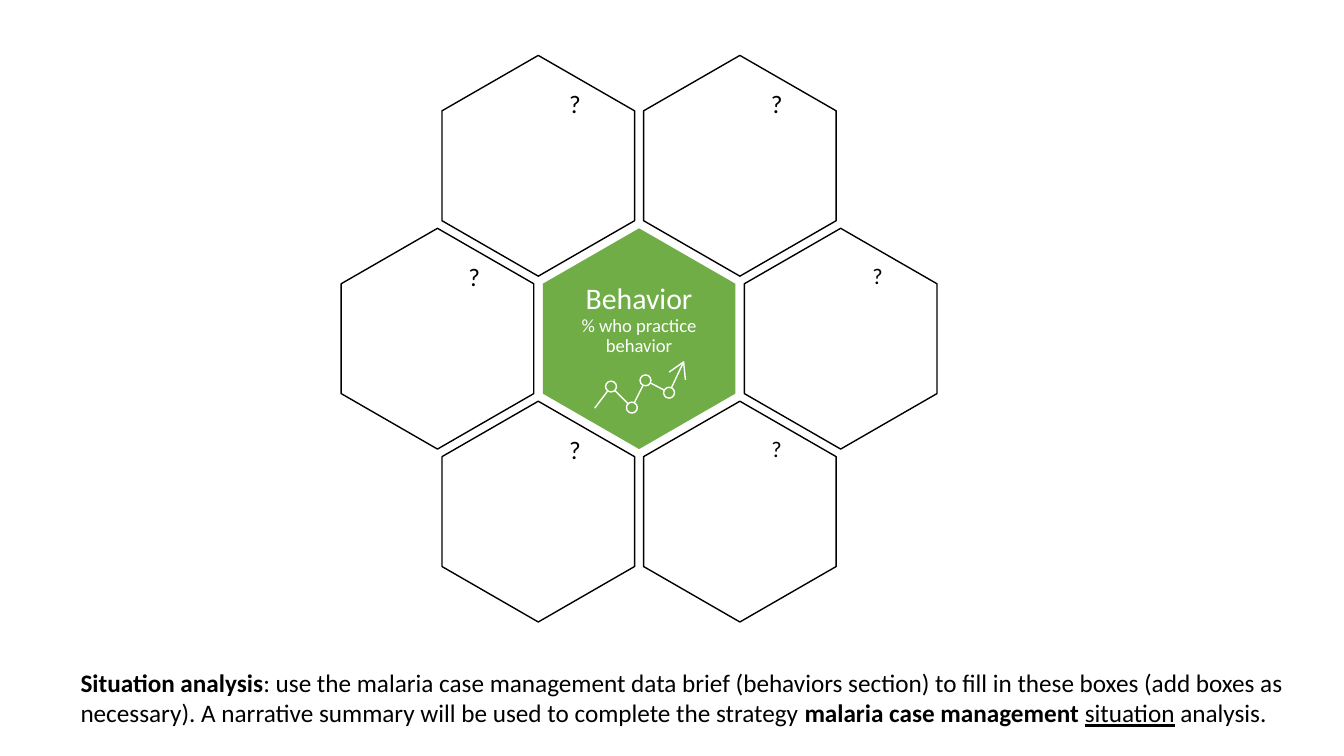
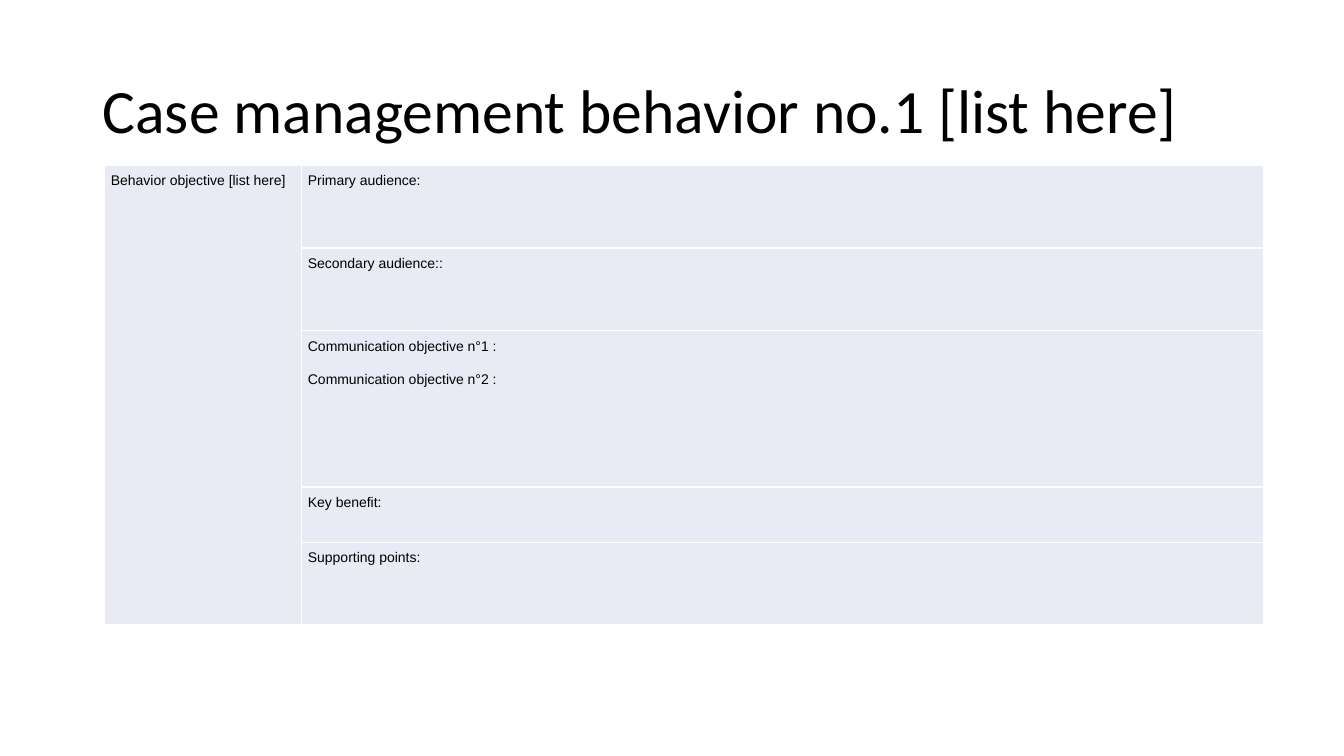
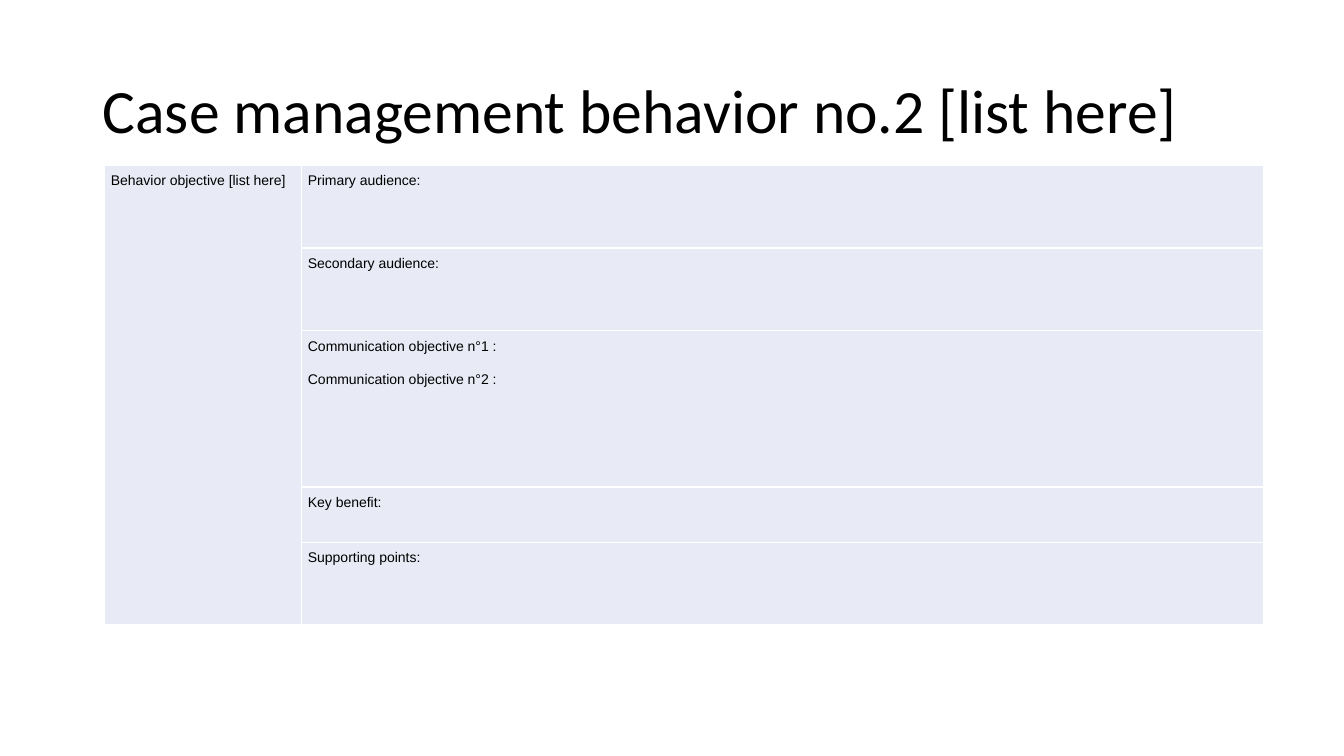
import math
from dataclasses import dataclass

from lxml import etree
from pptx import Presentation
from pptx import util as u
from pptx.dml.color import RGBColor
from pptx.enum import shapes, text
from pptx.oxml import ns

BLACK = RGBColor(0x00, 0x00, 0x00)
WHITE = RGBColor(0xFF, 0xFF, 0xFF)
GREEN = RGBColor(0x70, 0xAD, 0x47)
LAVENDER = RGBColor(0xE8, 0xEB, 0xF5)

BODY_FONT = "Calibri"
TABLE_FONT = "Arial"

WIDTH, HEIGHT = u.Inches(13.33), u.Inches(7.5)
COL, ROW = WIDTH / 100, HEIGHT / 100  # the slide is a grid of 100 by 100
THIN = u.Pt(1)


@dataclass
class Box:
    """A rectangle in columns and rows of the slide grid."""
    left: float
    top: float
    width: float
    height: float

    @classmethod
    def around(cls, x, y, width, height):
        return cls(x - width / 2, y - height / 2, width, height)

    def emu(self):
        return (round(self.left * COL), round(self.top * ROW),
                round(self.width * COL), round(self.height * ROW))

    def point(self, across, down):
        """The EMU position at the given shares of the box."""
        left, top, width, height = self.emu()
        return left + across * width, top + down * height


CAPTION = Box(5.25, 87.6, 91.2, 9.47)
TITLE = Box(6.9, 5.33, 86.25, 19.33)
TABLE = Box(7.8, 21.87, 86.25, 60.8)
HONEYCOMB = Box.around(47.55, 44.8, 44.7, 75)

HEX_LENGTH, HEX_BREADTH = 16.43, 25.47
HEX_STEP_X, HEX_STEP_Y = 7.5, 22.87
LABEL_WIDTH, LABEL_HEIGHT = 9.53, 19.47
QUESTION_INDENT = 5.47
# half-columns and rows from the centre, size of the question mark
QUESTIONS = [(-1, -1, 18), (-1, 1, 18), (1, 1, 16),
             (-2, 0, 18), (1, -1, 18), (2, 0, 16)]

TREND = [(0, 0.9), (0.18, 0.48), (0.41, 0.89), (0.56, 0.36), (0.82, 0.6), (0.98, 0)]
ARROWHEAD = [(1, 0.35), TREND[-1], (0.82, 0.2)]
NODE_SHARE = 0.12

COLUMN_SHARES = [0.17, 0.83]
ROW_SHARES = [0.18, 0.18, 0.34, 0.12, 0.18]


def style(para, size, color=BLACK, font=BODY_FONT, spacing=1.0, align=None):
    para.font.size = u.Pt(size)
    para.font.name = font
    para.font.color.rgb = color
    para.line_spacing = spacing
    para.alignment = align


def add_textbox(page, box, margins=None):
    frame = page.shapes.add_textbox(*box.emu()).text_frame
    frame.word_wrap = True
    if margins is not None:
        (frame.margin_left, frame.margin_top,
         frame.margin_right, frame.margin_bottom) = margins
    return frame


def add_centred(para, words, size, color):
    para.text = words
    style(para, size, color, spacing=0.9, align=text.PP_ALIGN.CENTER)


def outline(shape, color):
    shape.shadow.inherit = False
    shape.fill.background()
    shape.line.color.rgb = color
    shape.line.width = THIN


def add_hexagon(page, x, y):
    hexagon = page.shapes.add_shape(
        shapes.MSO_SHAPE.HEXAGON, *Box.around(x, y, HEX_LENGTH, HEX_BREADTH).emu())
    hexagon.adjustments[0] = 0.288
    hexagon.adjustments[1] = 1.155
    hexagon.rotation = 90
    outline(hexagon, BLACK)
    return hexagon


def add_question(page, x, y, size):
    add_hexagon(page, x, y)
    label = Box.around(x, y, LABEL_WIDTH, LABEL_HEIGHT)
    frame = add_textbox(page, label, (round(QUESTION_INDENT * COL), 0, 0, 0))
    add_centred(frame.paragraphs[0], "?", size, BLACK)


def add_trend_icon(page, box):
    group = page.shapes.add_group_shape()
    points = [box.point(*share) for share in TREND]
    diameter = NODE_SHARE * box.width * COL
    last = len(points) - 2

    barbs = [box.point(*share) for share in ARROWHEAD]
    builder = group.shapes.build_freeform(*barbs[0], scale=1.0)
    builder.add_line_segments(barbs[1:], close=False)
    outline(builder.convert_to_shape(), WHITE)

    for index, (start, end) in enumerate(zip(points, points[1:])):
        trim = diameter / 2 / math.dist(start, end)
        head = trim if index > 0 else 0
        tail = trim if index < last else 0
        if index == last:
            tail = 0
        else:
            tail = trim
        dx, dy = end[0] - start[0], end[1] - start[1]
        line = group.shapes.add_connector(
            shapes.MSO_CONNECTOR.STRAIGHT,
            round(start[0] + head * dx), round(start[1] + head * dy),
            round(end[0] - tail * dx), round(end[1] - tail * dy))
        line.line.color.rgb = WHITE
        line.line.width = THIN
        etree.SubElement(line.element.spPr, ns.qn("a:effectLst"))

    for x, y in points[1:-1]:
        node = group.shapes.add_shape(
            shapes.MSO_SHAPE.OVAL, round(x - diameter / 2), round(y - diameter / 2),
            round(diameter), round(diameter))
        outline(node, WHITE)


def add_behavior(page, x, y):
    hexagon = add_hexagon(page, x, y)
    hexagon.fill.solid()
    hexagon.fill.fore_color.rgb = GREEN
    hexagon.line.fill.background()
    label = Box.around(x, y + 2.47, LABEL_WIDTH, LABEL_HEIGHT)
    frame = add_textbox(page, label, (0, 0, 0, 0))
    add_centred(frame.paragraphs[0], "Behavior", 21.3, WHITE)
    add_centred(frame.add_paragraph(), "% who practice behavior", 13.3, WHITE)
    add_trend_icon(page, Box(x - 3.3, y + 3.07, 6.75, 6.8))


def add_honeycomb(page, box):
    x, y = box.left + box.width / 2, box.top + box.height / 2
    for across, down, size in QUESTIONS:
        add_question(page, x + across * HEX_STEP_X, y + down * HEX_STEP_Y, size)
    add_behavior(page, x, y)


def add_caption(page, box):
    para = add_textbox(page, box).paragraphs[0]
    style(para, 18)
    for words, bold, underline in [
        ("Situation analysis", True, False),
        (": use the malaria case management data brief (behaviors section) to fill in "
         "these boxes (add boxes as necessary). A narrative summary will be used to "
         "complete the strategy ", False, False),
        ("malaria case management ", True, False),
        ("situation", False, True),
        (" analysis.", False, False),
    ]:
        span = para.add_run()
        span.text = words
        span.font.bold = bold
        span.font.underline = underline


def add_title(page, box, words):
    frame = add_textbox(page, box)
    frame.vertical_anchor = text.MSO_ANCHOR.MIDDLE
    frame.text = words
    style(frame.paragraphs[0], 44, spacing=0.9)


def format_cell(cell):
    properties = cell._tc.get_or_add_tcPr()
    for side in ("lnL", "lnR", "lnT", "lnB"):
        border = etree.SubElement(properties, ns.qn(f"a:{side}"), w=str(THIN))
        fill = etree.SubElement(border, ns.qn("a:solidFill"))
        etree.SubElement(fill, ns.qn("a:srgbClr"), val=str(WHITE))
    cell.fill.solid()
    cell.fill.fore_color.rgb = LAVENDER
    cell.margin_left, cell.margin_right = u.Inches(0.06), u.Inches(0.04)
    cell.margin_top = cell.margin_bottom = u.Inches(0.07)


def write_cell(cell, lines):
    cell.text = "\n".join(lines)
    for index, para in enumerate(cell.text_frame.paragraphs):
        style(para, 10, font=TABLE_FONT, spacing=1.06)
        if index:
            para.space_before = u.Pt(12)


def add_objectives_table(page, box, secondary):
    left, top, width, height = box.emu()
    table = page.shapes.add_table(
        len(ROW_SHARES), len(COLUMN_SHARES), left, top, width, height).table
    table.first_row = table.horz_banding = False
    for column, share in zip(table.columns, COLUMN_SHARES):
        column.width = round(share * width)
    for row, share in zip(table.rows, ROW_SHARES):
        row.height = round(share * height)
    for cell in table.iter_cells():
        format_cell(cell)

    table.cell(0, 0).merge(table.cell(len(ROW_SHARES) - 1, 0))
    write_cell(table.cell(0, 0), ["Behavior objective [list here]"])
    for index, lines in enumerate([
        ["Primary audience:"],
        [secondary],
        ["Communication objective n°1 :", "Communication objective n°2 :"],
        ["Key benefit:"],
        ["Supporting points:"],
    ]):
        write_cell(table.cell(index, 1), lines)


def add_page(deck):
    return deck.slides.add_slide(deck.slide_layouts[6])


def situation_slide(deck):
    page = add_page(deck)
    add_caption(page, CAPTION)
    add_honeycomb(page, HONEYCOMB)


def behavior_slide(deck, number, secondary):
    page = add_page(deck)
    add_title(page, TITLE, f"Case management behavior no.{number} [list here]")
    add_objectives_table(page, TABLE, secondary)


def main():
    deck = Presentation()
    deck.slide_width, deck.slide_height = WIDTH, HEIGHT
    situation_slide(deck)
    behavior_slide(deck, 1, "Secondary audience::")
    behavior_slide(deck, 2, "Secondary audience:")
    deck.save("out.pptx")


if __name__ == "__main__":
    main()
